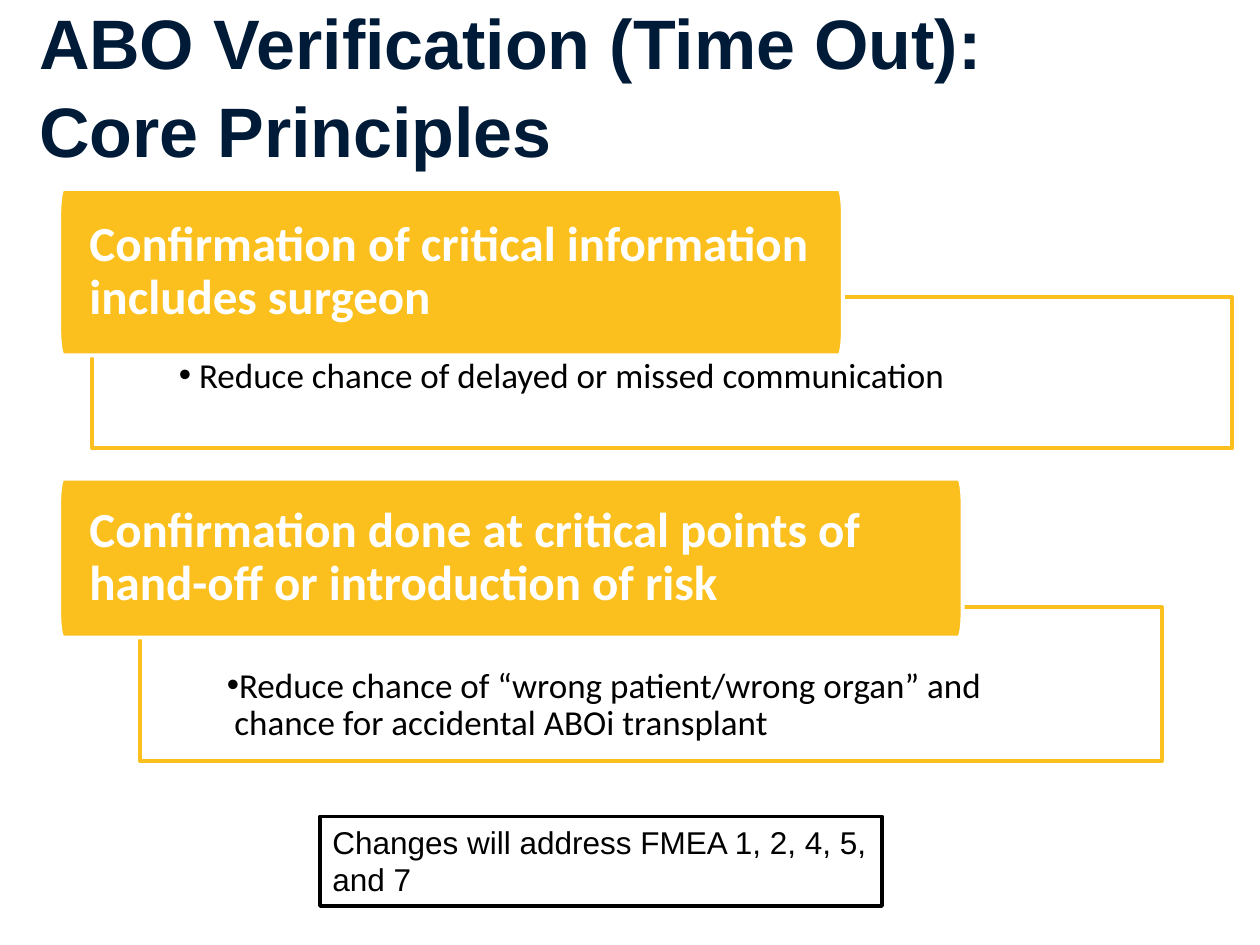
from math import cos, pi, sin

from lxml.etree import SubElement
from pptx import Presentation
from pptx.dml.color import RGBColor
from pptx.enum.shapes import MSO_SHAPE
from pptx.enum.text import MSO_ANCHOR, PP_ALIGN
from pptx.oxml.ns import qn
from pptx.util import Inches, Pt

NAVY, GOLD, WHITE, BLACK = "001B37", "FBC01E", "FFFFFF", "000000"


def rgb(value):
    return RGBColor.from_string(value)


def style(sp, fill, line):
    sp.shadow.inherit = False
    if fill:
        sp.fill.solid()
        sp.fill.fore_color.rgb = rgb(fill)
    else:
        sp.fill.background()
    sp.line.color.rgb = rgb(line)
    sp.line.width = Pt(2.25)


def write(sp, text, font="Calibri", size=20, color=BLACK, bold=False,
          spacing=None, anchor=MSO_ANCHOR.TOP, insets=(0.1, 0.05, 0.1, 0.05),
          hang=None):
    """Fill a shape with one paragraph; hang gives it a bullet."""
    tf = sp.text_frame
    tf.word_wrap = True
    tf.vertical_anchor = anchor
    tf.margin_left, tf.margin_top, tf.margin_right, tf.margin_bottom = map(Inches, insets)
    p = tf.paragraphs[0]
    p.alignment = PP_ALIGN.LEFT
    p.line_spacing = spacing
    if hang:
        pPr = p._p.get_or_add_pPr()
        pPr.set("marL", str(Inches(hang)))
        pPr.set("indent", str(-Inches(hang)))
        SubElement(pPr, qn("a:buFont"), typeface="Arial")
        SubElement(pPr, qn("a:buChar"), char="•")
    r = p.add_run()
    r.text = text
    r.font.name = font
    r.font.size = Pt(size)
    r.font.bold = bold
    r.font.color.rgb = rgb(color)


def place(sp, box):
    sp.left, sp.top, sp.width, sp.height = map(Inches, box)


def add_title(s, box, text):
    sp = s.shapes.title
    place(sp, box)
    write(sp, text, font="Arial", size=40, color=NAVY, bold=True, spacing=1.04,
          anchor=MSO_ANCHOR.MIDDLE, insets=(0.1, 0.05, 1, 0.05))


def add_box(s, box, fill, line):
    sp = s.shapes.add_shape(MSO_SHAPE.RECTANGLE, *map(Inches, box))
    style(sp, fill, line)
    return sp


def add_tab(s, box, text):
    """Gold heading with tall, narrow elliptical corners."""
    x, y, w, h = box
    rx, ry, steps = 0.03, h / 6, 8
    centers = [(x + w - rx, y + h - ry), (x + rx, y + h - ry),
               (x + rx, y + ry), (x + w - rx, y + ry)]
    points = []
    for corner, (cx, cy) in enumerate(centers):
        for i in range(steps + 1):
            a = (corner + i / steps) * pi / 2
            points.append((Inches(cx + rx * cos(a)), Inches(cy + ry * sin(a))))
    builder = s.shapes.build_freeform(*points[0])
    builder.add_line_segments(points[1:], close=True)
    sp = builder.convert_to_shape()
    style(sp, GOLD, WHITE)
    write(sp, text, size=28, color=WHITE, bold=True, spacing=0.9,
          anchor=MSO_ANCHOR.MIDDLE, insets=(0.24, 0.01, 0.24, 0.01))


def add_principle(s, tab_box, heading, detail_box, detail, hang):
    sp = add_box(s, detail_box, WHITE, GOLD)
    write(sp, detail, spacing=0.9, insets=(0.69, 0.48, 0.69, 0.05), hang=hang)
    add_tab(s, tab_box, heading)


def add_note(s, box, text):
    write(add_box(s, box, None, BLACK), text, font="Arial", size=18)


def main():
    prs = Presentation()
    prs.slide_width, prs.slide_height = Inches(10), Inches(7.5)
    s = prs.slides.add_slide(prs.slide_layouts[5])
    add_title(s, (0.21, 0.07, 9.79, 1.19), "ABO Verification (Time Out): Core Principles")
    add_principle(s, (0.47, 1.5, 6.22, 1.32),
                  "Confirmation of critical information includes surgeon",
                  (0.73, 2.36, 9.05, 1.2),
                  "Reduce chance of delayed or missed communication", 0.16)
    add_principle(s, (0.47, 3.8, 7.17, 1.26),
                  "Confirmation done at critical points of hand-off or introduction of risk",
                  (1.11, 4.82, 8.11, 1.22),
                  "Reduce chance of “wrong patient/wrong organ” and chance for "
                  "accidental ABOi transplant", 0.06)
    add_note(s, (2.54, 6.48, 4.46, 0.71), "Changes will address FMEA 1, 2, 4, 5, and 7")
    prs.save("out.pptx")


if __name__ == "__main__":
    main()
